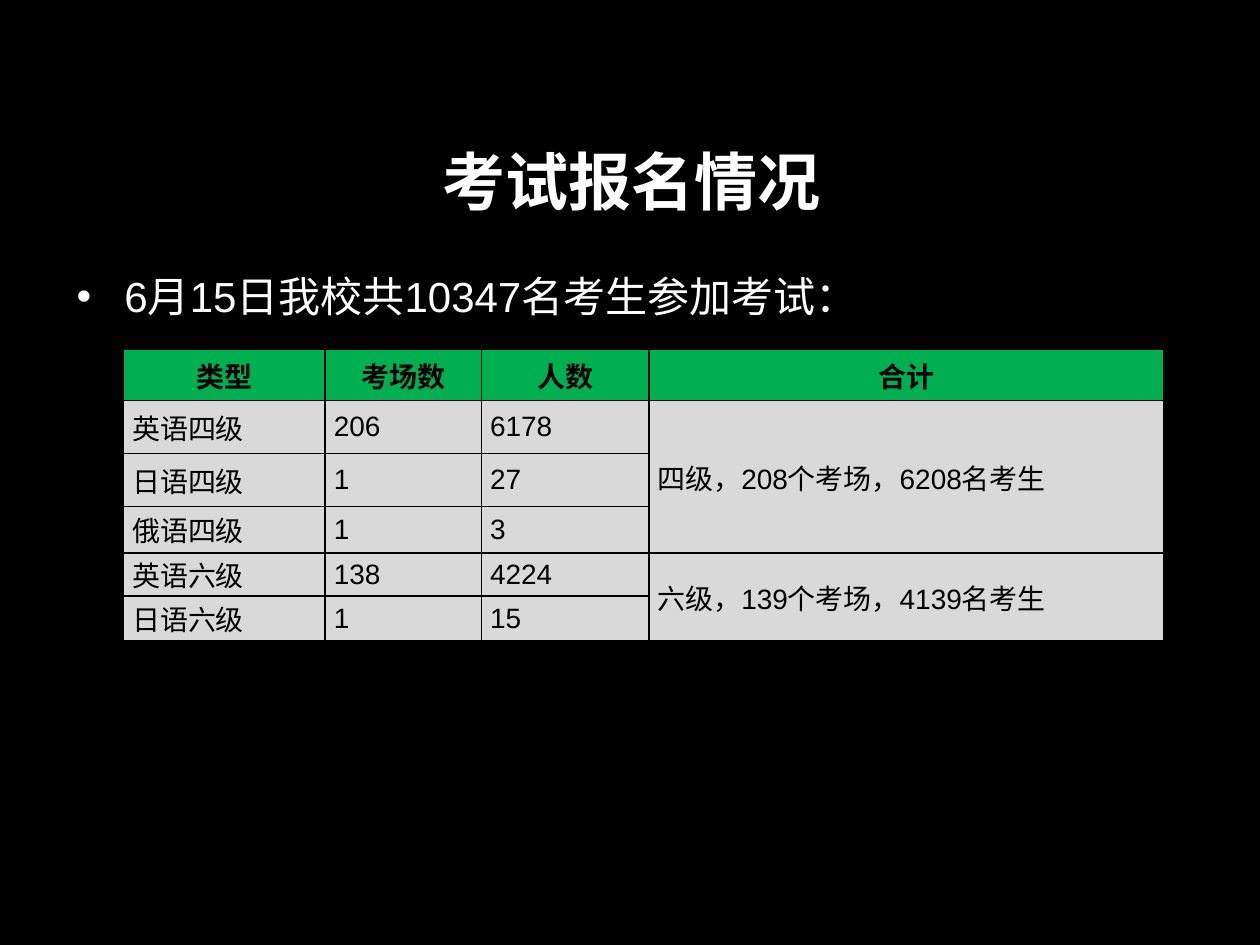
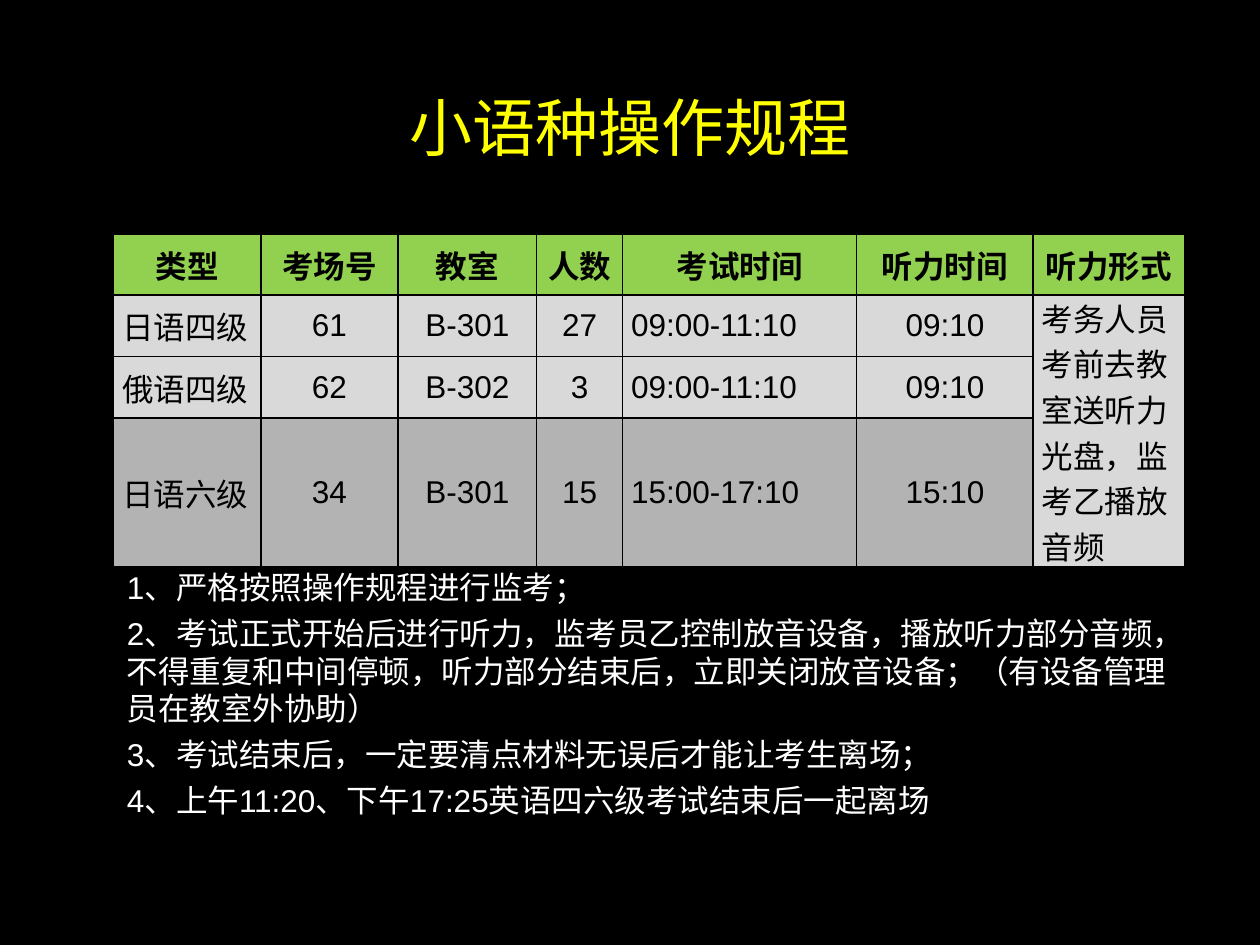
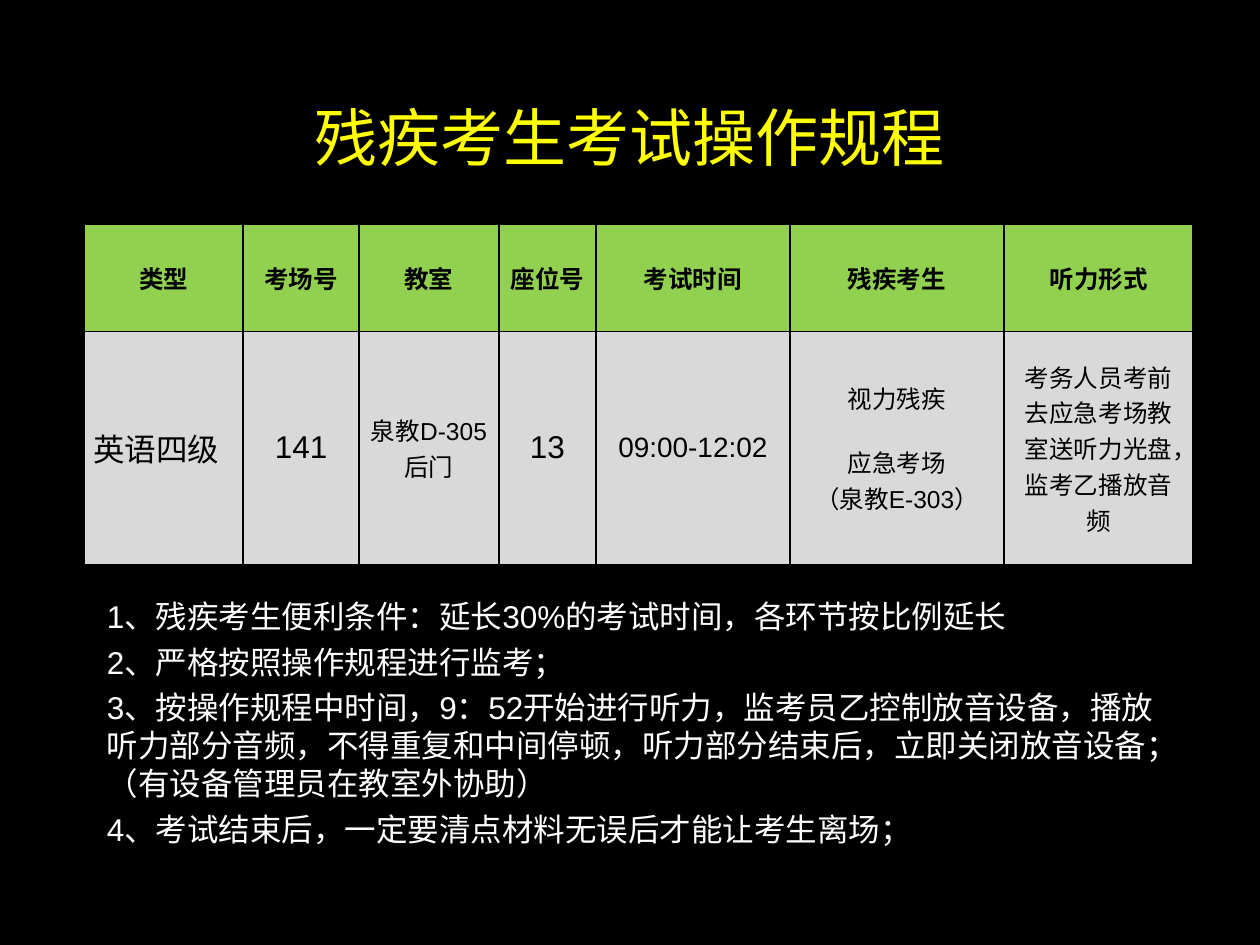
from lxml import etree
from pptx import Presentation
from pptx import util as u
from pptx.dml.color import RGBColor
from pptx.enum import text
from pptx.oxml import ns

LATIN, CJK = "Arial", "Noto Sans CJK SC"
BLACK, WHITE, YELLOW = "000000", "FFFFFF", "FFFF00"
GREEN, LIME, PALE, GREY = "00B050", "92D050", "D9D9D9", "B3B3B3"
LEFT, CENTER = text.PP_ALIGN.LEFT, text.PP_ALIGN.CENTER


def rgb(color):
    return RGBColor.from_string(color)


def add_child(parent, tag, **attributes):
    return etree.SubElement(parent, ns.qn(tag), attributes)


def style(paragraph, size, color, name=LATIN, bold=False, align=LEFT):
    paragraph.alignment = align
    font = paragraph.font
    font.size, font.bold, font.name = u.Pt(size), bold, name
    font.color.rgb = rgb(color)
    add_child(font._element, "a:ea", typeface=CJK)


def add_slide(deck):
    slide = deck.slides.add_slide(deck.slide_layouts[6])
    slide.background.fill.solid()
    slide.background.fill.fore_color.rgb = rgb(BLACK)
    return slide


def add_frame(slide, left, top, width, height):
    box = slide.shapes.add_textbox(*map(u.Inches, (left, top, width, height)))
    box.text_frame.word_wrap = True
    return box.text_frame


def add_title(slide, title, top, left=0.5, height=1.25, color=YELLOW, name=CJK, bold=False):
    frame = add_frame(slide, left, top, 9, height)
    frame.vertical_anchor = text.MSO_ANCHOR.MIDDLE
    frame.text = title
    style(frame.paragraphs[0], 36, color, name, bold, CENTER)


def add_bullet(slide, sentence):
    frame = add_frame(slide, 0.51, 2.1, 9, 0.6)
    frame.text = sentence
    paragraph = frame.paragraphs[0]
    properties = paragraph._p.get_or_add_pPr()
    properties.set("marL", str(u.Inches(0.38)))
    properties.set("indent", str(u.Inches(-0.38)))
    add_child(properties, "a:buFont", typeface=LATIN)
    add_child(properties, "a:buChar", char="•")
    style(paragraph, 24, WHITE)


def add_notes(slide, notes, left, top, width, height):
    frame = add_frame(slide, left, top, width, height)
    frame.text = "\n".join(f"{number}、{note}" for number, note in enumerate(notes, 1))
    for index, paragraph in enumerate(frame.paragraphs):
        if index:
            paragraph.space_before = u.Pt(4.5)
        style(paragraph, 18, WHITE)


def add_borders(cell):
    properties = cell._tc.get_or_add_tcPr()
    for index, side in enumerate(("lnL", "lnR", "lnT", "lnB")):
        line = etree.Element(ns.qn(f"a:{side}"), w=str(u.Pt(1)))
        add_child(add_child(line, "a:solidFill"), "a:srgbClr", val=BLACK)
        properties.insert(index, line)


def fill_cell(cell, content, fill, **font):
    cell.text = content
    cell.fill.solid()
    cell.fill.fore_color.rgb = rgb(fill)
    cell.vertical_anchor = text.MSO_ANCHOR.MIDDLE
    cell.margin_left = cell.margin_right = u.Inches(0.07)
    cell.margin_top = cell.margin_bottom = 0
    for paragraph in cell.text_frame.paragraphs:
        style(paragraph, color=BLACK, **font)
    add_borders(cell)


def add_exam_table(slide, left, top, widths, heights, rows, fills, header_size,
                   sizes, left_columns, merges=()):
    frame = slide.shapes.add_table(
        len(rows), len(widths),
        *map(u.Inches, (left, top, sum(widths), sum(heights))))
    table = frame.table
    table.horz_banding = False
    for column, width in zip(table.columns, widths):
        column.width = u.Inches(width)
    for row, height in zip(table.rows, heights):
        row.height = u.Inches(height)
    for r, (row, fill) in enumerate(zip(rows, fills)):
        for c, content in enumerate(row):
            if r == 0:
                font = dict(size=header_size, name=CJK, bold=True, align=CENTER)
            else:
                font = dict(size=sizes[c], align=LEFT if c in left_columns else CENTER)
            fill_cell(table.cell(r, c), content, fill, **font)
    for first, last, column in merges:
        table.cell(first, column).merge(table.cell(last, column))
    return table


def registration_slide(deck):
    slide = add_slide(deck)
    add_title(slide, "考试报名情况", 1, 0.51, 0.87, WHITE, LATIN, True)
    add_bullet(slide, "6月15日我校共10347名考生参加考试：")
    rows = [
        ("类型", "考场数", "人数", "合计"),
        ("英语四级", "206", "6178", "四级，208个考场，6208名考生"),
        ("日语四级", "1", "27", ""),
        ("俄语四级", "1", "3", ""),
        ("英语六级", "138", "4224", "六级，139个考场，4139名考生"),
        ("日语六级", "1", "15", ""),
    ]
    add_exam_table(slide, 0.98, 2.77, (1.6, 1.24, 1.33, 4.09),
                   (0.41, 0.42, 0.42, 0.37, 0.34, 0.36), rows,
                   [GREEN] + [PALE] * 5, 16, [16] * 4, range(4),
                   [(1, 3, 3), (4, 5, 3)])


def languages_slide(deck):
    slide = add_slide(deck)
    add_title(slide, "小语种操作规程", 0.38)
    add_notes(slide, [
        "严格按照操作规程进行监考；",
        "考试正式开始后进行听力，监考员乙控制放音设备，播放听力部分音频，"
        "不得重复和中间停顿，听力部分结束后，立即关闭放音设备；（有设备管理员在教室外协助）",
        "考试结束后，一定要清点材料无误后才能让考生离场；",
        "上午11:20、下午17:25英语四六级考试结束后一起离场",
    ], 0.91, 4.46, 8.67, 2.42)
    rows = [
        ("类型", "考场号", "教室", "人数", "考试时间", "听力时间", "听力形式"),
        ("日语四级", "61", "B-301", "27", "09:00-11:10", "09:10",
         "考务人员考前去教室送听力光盘，监考乙播放音频"),
        ("俄语四级", "62", "B-302", "3", "09:00-11:10", "09:10", ""),
        ("日语六级", "34", "B-301", "15", "15:00-17:10", "15:10", ""),
    ]
    add_exam_table(slide, 0.9, 1.86, (1.17, 1.09, 1.1, 0.68, 1.86, 1.4, 1.2),
                   (0.48, 0.49, 0.49, 1.18), rows, [LIME, PALE, PALE, GREY],
                   18, [18] * 7, (0, 4, 6), [(1, 3, 6)])


def disability_slide(deck):
    slide = add_slide(deck)
    add_title(slide, "残疾考生考试操作规程", 0.46)
    add_notes(slide, [
        "残疾考生便利条件：延长30%的考试时间，各环节按比例延长",
        "严格按照操作规程进行监考；",
        "按操作规程中时间，9：52开始进行听力，监考员乙控制放音设备，播放听力部分音频，"
        "不得重复和中间停顿，听力部分结束后，立即关闭放音设备；（有设备管理员在教室外协助）",
        "考试结束后，一定要清点材料无误后才能让考生离场；",
    ], 0.75, 4.69, 8.66, 2.1)
    rows = [
        ("类型", "考场号", "教室", "座位号", "考试时间", "残疾考生", "听力形式"),
        ("英语四级", "141", "泉教D-305后门", "13", "09:00-12:02",
         "视力残疾\n应急考场\n（泉教E-303）",
         "考务人员考前去应急考场教室送听力光盘，监考乙播放音频"),
    ]
    table = add_exam_table(slide, 0.67, 1.78, (1.26, 0.92, 1.11, 0.77, 1.54, 1.7, 1.5),
                           (0.85, 1.85), rows, [LIME, PALE], 14,
                           (18, 18, 14, 18, 16, 14, 14), (0,))
    emergency_room = table.cell(1, 5).text_frame.paragraphs[1]
    emergency_room.space_before = u.Pt(16)


def main():
    deck = Presentation()
    deck.slide_width, deck.slide_height = u.Inches(10), u.Inches(7.5)
    registration_slide(deck)
    languages_slide(deck)
    disability_slide(deck)
    deck.save("out.pptx")


if __name__ == "__main__":
    main()
